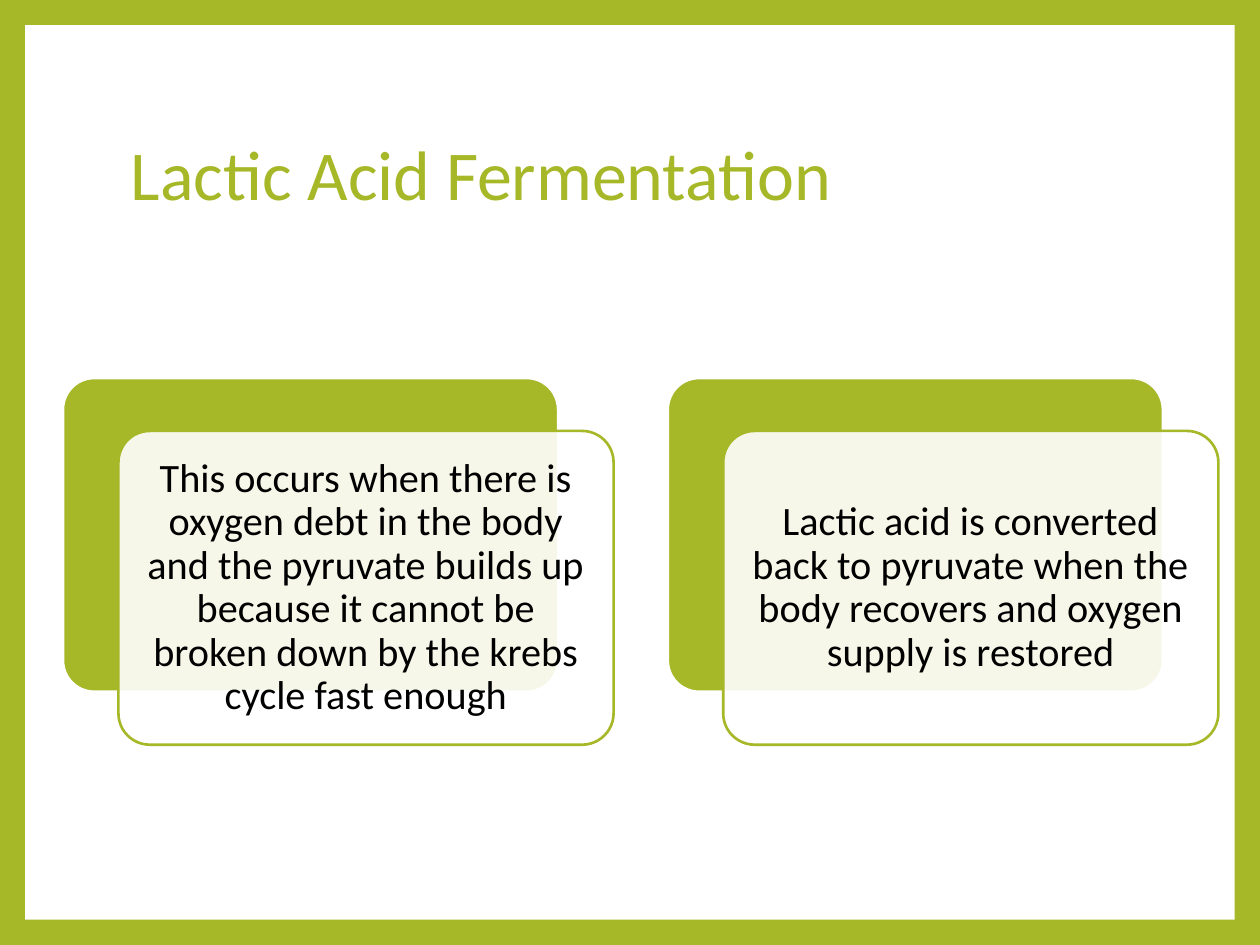
"""Build the lactic acid fermentation slide."""
from lxml import etree
from pptx import Presentation
from pptx import util as u
from pptx.dml.color import RGBColor
from pptx.enum import shapes, text
from pptx.oxml.ns import qn

GREEN, WHITE, BLACK = "A6B727", "FFFFFF", "000000"
CARD_WIDTH, CARD_HEIGHT = 3.93, 2.49
CARD_LEFT, CARD_TOP, CARD_STEP = 0.5, 3, 4.8
FRONT_SHIFT_X, FRONT_SHIFT_Y = 0.44, 0.42
TEXT_INSET = 0.07
STATEMENTS = (
    "This occurs when there is oxygen debt in the body and the pyruvate builds up "
    "because it cannot be broken down by the krebs cycle fast enough",
    "Lactic acid is converted back to pyruvate when the body recovers and oxygen "
    "supply is restored",
)


def set_attributes(target, values):
    """Set each named attribute of the target."""
    for attribute, value in values.items():
        setattr(target, attribute, value)


def paint(color_format, hex_color):
    """Apply a hex colour to a fill or line colour."""
    color_format.rgb = RGBColor.from_string(hex_color)


def add_panel(slide, kind, box, fill, outline=None, opacity=100):
    """Add a filled shape with an optional outline and transparency."""
    panel = slide.shapes.add_shape(kind, *map(u.Inches, box))
    panel.shadow.inherit = False
    panel.fill.solid()
    paint(panel.fill.fore_color, fill)
    if opacity < 100:
        color = panel.fill._xPr.find(qn("a:solidFill"))[0]
        etree.SubElement(color, qn("a:alpha"), val=str(opacity * 1000))
    if outline:
        paint(panel.line.color, outline)
        panel.line.width = u.Pt(1.5)
    else:
        panel.line.fill.background()
    return panel


def add_words(slide, box, words, size, color, align):
    """Add a wrapped, vertically centred paragraph."""
    frame = slide.shapes.add_textbox(*map(u.Inches, box)).text_frame
    inset = u.Inches(0.1)
    set_attributes(frame, {
        "word_wrap": True, "vertical_anchor": text.MSO_ANCHOR.MIDDLE,
        "margin_left": inset, "margin_right": inset,
        "margin_top": inset, "margin_bottom": inset,
    })
    paragraph = frame.paragraphs[0]
    set_attributes(paragraph, {"text": words, "alignment": align, "line_spacing": 0.9})
    font = paragraph.runs[0].font
    set_attributes(font, {"name": "Calibri", "size": u.Pt(size)})
    paint(font.color, color)


def add_statement(slide, left, statement):
    """Add a green card, its translucent front card and the statement."""
    rounded = shapes.MSO_SHAPE.ROUNDED_RECTANGLE
    front_left, front_top = left + FRONT_SHIFT_X, CARD_TOP + FRONT_SHIFT_Y
    size = (CARD_WIDTH, CARD_HEIGHT)
    back = add_panel(slide, rounded, (left, CARD_TOP, *size), GREEN, WHITE)
    front = add_panel(slide, rounded, (front_left, front_top, *size), WHITE, GREEN, 90)
    for card in (back, front):
        card.adjustments[0] = 0.1
    text_box = (front_left + TEXT_INSET, front_top + TEXT_INSET,
                CARD_WIDTH - 2 * TEXT_INSET, CARD_HEIGHT - 2 * TEXT_INSET)
    add_words(slide, text_box, statement, 23, BLACK, text.PP_ALIGN.CENTER)


def main():
    """Build and save the slide."""
    deck = Presentation()
    set_attributes(deck, {"slide_width": u.Inches(10), "slide_height": u.Inches(7.5)})
    slide = deck.slides.add_slide(deck.slide_layouts[6])
    slide.background.fill.solid()
    paint(slide.background.fill.fore_color, GREEN)
    add_panel(slide, shapes.MSO_SHAPE.RECTANGLE, (0.2, 0.2, 9.6, 7.1), WHITE)
    add_words(slide, (0.94, 0.67, 8.1, 1.48), "Lactic Acid Fermentation",
              40, GREEN, text.PP_ALIGN.LEFT)
    for column, statement in enumerate(STATEMENTS):
        add_statement(slide, CARD_LEFT + column * CARD_STEP, statement)
    deck.save("out.pptx")


if __name__ == "__main__":
    main()
